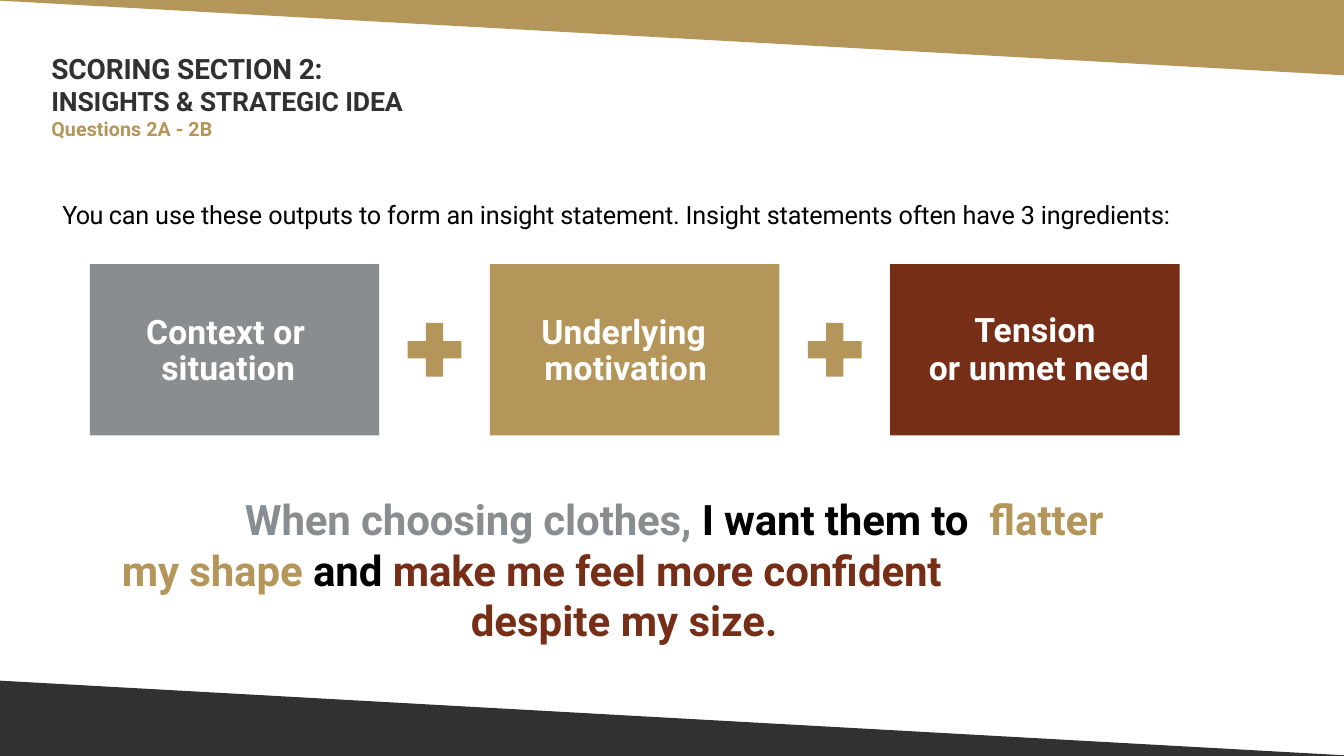
import dataclasses

import pptx
import pptx.dml.color
import pptx.enum.shapes
import pptx.enum.text
import pptx.util


@dataclasses.dataclass(frozen=True)
class Theme:
    font: str = "Roboto"
    gold: str = "B4965A"
    charcoal: str = "313131"
    grey: str = "898D8F"
    rust: str = "762E17"
    black: str = "000000"
    white: str = "FFFFFF"
    title: int = 20
    subtitle: int = 19
    label: int = 14
    body: int = 18
    card: int = 24
    quote: int = 30


def rgb(colour):
    return pptx.dml.color.RGBColor.from_string(colour)


def assign(target, values):
    for name, value in values.items():
        setattr(target, name, value)


class Board:
    """Places elements by percentages of the slide's width and height."""

    def __init__(self, deck, theme):
        self.width, self.height = deck.slide_width, deck.slide_height
        self.theme = theme
        self.slide = deck.slides.add_slide(deck.slide_layouts[6])

    def x(self, share):
        return int(self.width * share / 100)

    def y(self, share):
        return int(self.height * share / 100)

    def box(self, left, top, width, height):
        return self.x(left), self.y(top), self.x(width), self.y(height)

    def paint(self, shape, colour, outlined=False):
        shape.shadow.inherit = False
        shape.fill.solid()
        shape.fill.fore_color.rgb = rgb(colour)
        if outlined:
            shape.line.color.rgb = rgb(colour)
            shape.line.width = pptx.util.Pt(1)
        else:
            shape.line.fill.background()
        return shape

    def wedge(self, corners, colour):
        start, *rest = [(self.x(x), self.y(y)) for x, y in corners]
        outline = self.slide.shapes.build_freeform(*start)
        outline.add_line_segments(rest, close=True)
        self.paint(outline.convert_to_shape(), colour, outlined=True)

    def fill_text(self, shape, paragraphs, inset=0):
        """Each paragraph is (format, margin, indent, size, bold, tracking, runs)."""
        frame = shape.text_frame
        assign(frame, {
            "word_wrap": True,
            "margin_left": 0, "margin_right": 0, "margin_bottom": 0,
            "margin_top": pptx.util.Inches(inset),
            "vertical_anchor": pptx.enum.text.MSO_ANCHOR.TOP,
        })
        for number, (style, margin, indent, size, bold, tracking, runs) in enumerate(paragraphs):
            paragraph = frame.add_paragraph() if number else frame.paragraphs[0]
            assign(paragraph, {"alignment": pptx.enum.text.PP_ALIGN.LEFT, **style})
            properties = paragraph._p.get_or_add_pPr()
            properties.set("marL", str(pptx.util.Inches(margin)))
            properties.set("indent", str(pptx.util.Inches(indent)))
            for words, colour, *own_tracking in runs:
                run = paragraph.add_run()
                run.text = words
                assign(run.font, {"name": self.theme.font, "size": pptx.util.Pt(size), "bold": bold})
                run.font.color.rgb = rgb(colour)
                spacing = own_tracking[0] if own_tracking else tracking
                run._r.get_or_add_rPr().set("spc", str(round(spacing * 100)))

    def text(self, left, top, width, height, paragraphs, inset=0):
        self.fill_text(self.slide.shapes.add_textbox(*self.box(left, top, width, height)),
                       paragraphs, inset)

    def card(self, left, top, width, height, colour, paragraphs, inset):
        shape = self.slide.shapes.add_shape(
            pptx.enum.shapes.MSO_SHAPE.RECTANGLE, *self.box(left, top, width, height))
        self.fill_text(self.paint(shape, colour), paragraphs, inset)

    def plus(self, left, top, width, height, colour):
        shape = self.slide.shapes.add_shape(
            pptx.enum.shapes.MSO_SHAPE.CROSS, *self.box(left, top, width, height))
        shape.adjustments[0] = 0.34
        self.paint(shape, colour)


def main():
    theme = Theme()
    deck = pptx.Presentation()
    deck.slide_width = pptx.util.Inches(13.33)
    deck.slide_height = pptx.util.Inches(7.5)
    board = Board(deck, theme)
    pt = pptx.util.Pt

    # Slanted bands
    slant = 9.87
    board.wedge([(0, 0), (100, 0), (100, slant)], theme.gold)
    board.wedge([(0, 100 - slant), (100, 100), (0, 100)], theme.charcoal)

    # Heading
    board.text(3.75, 6.67, 86, 13, [
        ({"space_before": pt(1.1)}, 0.01, 0, theme.title, True, -0.1,
         [("SCORING SECTION 2:", theme.charcoal)]),
        ({}, 0.01, 0, theme.subtitle, True, -0.1,
         [("INSIGHTS & STRATEGIC IDEA", theme.charcoal)]),
        ({"space_before": pt(0.2)}, 0.01, 0, theme.label, True, 0.05,
         [("Questions 2A - 2B", theme.gold)]),
    ], inset=0.01)

    # Introduction
    board.text(4.65, 26.3, 85.1, 4.5, [
        ({}, 0, 0, theme.body, False, -0.1,
         [("You ", theme.black, -0.6),
          ("can use these outputs to form an insight statement. "
           "Insight statements often have 3 ingredients:", theme.black)]),
    ])

    # Three ingredients joined by plus signs
    wrapped = {"line_spacing": pt(25.9)}
    centred = {"line_spacing": pt(27.4), "alignment": pptx.enum.text.PP_ALIGN.CENTER}
    ingredients = [
        (theme.grey, 0.5, [(wrapped, 0.71, -0.15, "Context or situation")]),
        (theme.gold, 0.5, [(wrapped, 0.54, -0.03, "Underlying motivation")]),
        (theme.rust, 0.46, [(centred, 0, 0, "Tension"),
                            (centred, 0.08, 0, "or unmet need")]),
    ]
    first, pitch, top, width, height = 6.68, 29.78, 34.93, 21.53, 22.67
    plus_width, plus_height = 4, 7.11
    for place, (colour, inset, lines) in enumerate(ingredients):
        left = first + place * pitch
        board.card(left, top, width, height, colour, [
            (style, margin, indent, theme.card, True, 0.1, [(words, theme.white)])
            for style, margin, indent, words in lines], inset)
        if place < len(ingredients) - 1:
            board.plus(left + (width + pitch - plus_width) / 2,
                       top + (height - plus_height) / 2,
                       plus_width, plus_height, theme.gold)

    # Example insight, coloured by ingredient
    board.text(9, 65.2, 76.44, 20.4, [
        ({"space_before": pt(1)}, 0.01, 1.22, theme.quote, True, -0.1,
         [("When choosing clothes, ", theme.grey),
          ("I want them to", theme.black), (" ", theme.black, 7.4),
          ("flatter my shape ", theme.gold),
          ("and ", theme.black),
          ("make me feel more confident", theme.rust)]),
        ({}, 3.47, 0, theme.quote, True, 0, [("despite my size.", theme.rust)]),
    ], inset=0.01)

    deck.save("out.pptx")


if __name__ == "__main__":
    main()
